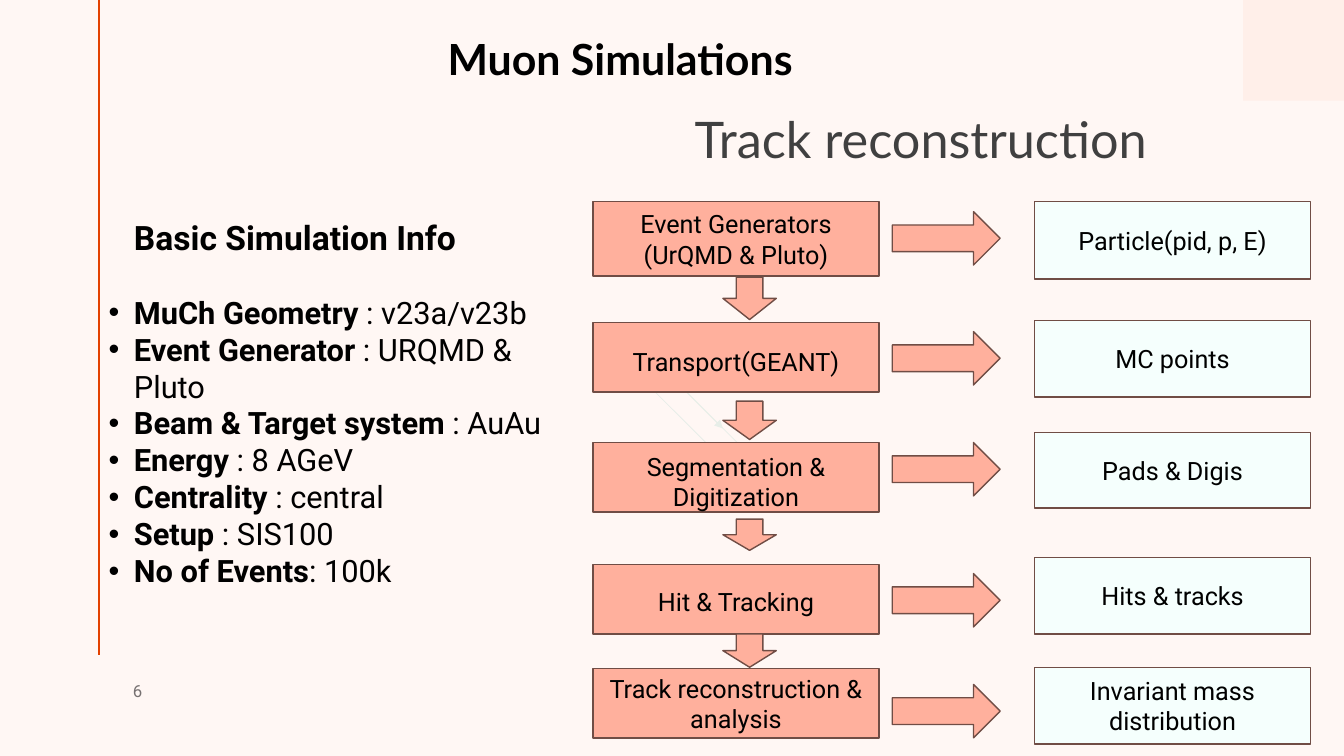
from lxml import etree
from pptx import Presentation
from pptx import util as u
from pptx.dml.color import RGBColor
from pptx.enum import shapes, text
from pptx.oxml.ns import qn

# Content
TITLE = "Muon Simulations"
HEADING = "Track reconstruction"
NUMBER = "6"
INFO = "Basic Simulation Info"
FACTS = [
    ("MuCh Geometry", " : v23a/v23b"),
    ("Event Generator", " : URQMD & Pluto"),
    ("Beam & Target system", " : AuAu"),
    ("Energy", " : 8 AGeV"),
    ("Centrality", " : central"),
    ("Setup", " : SIS100"),
    ("No of Events", ": 100k"),
]
# Stage text, top, height, top inset
STAGES = [
    ("Event Generators\n(UrQMD & Pluto)", 2, 0.74, 0.05),
    ("Transport(GEANT)", 3.2, 0.69, 0.13),
    ("Segmentation & Digitization", 4.39, 0.69, 0.13),
    ("Hit & Tracking", 5.6, 0.69, 0.1),
    ("Track reconstruction & analysis", 6.63, 0.69, 0.05),
]
# Result text, top, height, top of the arrow to it
RESULTS = [
    ("Particle(pid, p, E)", 2, 0.77, 2.1),
    ("MC points", 3.18, 0.76, 3.29),
    ("Pads & Digis", 4.29, 0.75, 4.39),
    ("Hits & tracks", 5.53, 0.76, 5.69),
    ("Invariant mass distribution", 6.62, 0.76, 6.79),
]
DROPS = [(2.75, 0.42), (3.98, 0.38), (5.15, 0.31), (6.29, 0.33)]
FAINT = [(6.17, 3.25), (6.31, 3.7), (6.48, 3.56)]

COLORS = {"back": "FFF7F4", "rule": "E34100", "corner": "FFEFE9",
          "stage": "FFB09D", "result": "F5FFFD", "edge": "704D45",
          "faint": "E7EEE8", "black": "000000", "head": "404040",
          "gray": "767171"}
KIND = shapes.MSO_SHAPE
ALIGN = text.PP_ALIGN
ANCHOR = text.MSO_ANCHOR


def rgb(name):
    return RGBColor.from_string(COLORS[name])


def style(font, color="black", **form):
    for key, val in {"name": "Roboto", **form}.items():
        setattr(font, key, val)
    font.color.rgb = rgb(color)


def write(frame, words, anchor=ANCHOR.MIDDLE, align=ALIGN.LEFT, space=None, **form):
    frame.word_wrap = True
    frame.vertical_anchor = anchor
    for i, line in enumerate(words.split("\n")):
        para = frame.paragraphs[0] if i == 0 else frame.add_paragraph()
        para.alignment = align
        if space:
            para.line_spacing = space
        run = para.add_run()
        run.text = line
        style(run.font, **form)


def label(box, words, **form):
    frame = slide.shapes.add_textbox(*map(u.Inches, box)).text_frame
    write(frame, words, **form)
    return frame


def block(kind, box, fill, edge="edge"):
    shape = slide.shapes.add_shape(kind, *map(u.Inches, box))
    shape.shadow.inherit = False
    shape.fill.solid()
    shape.fill.fore_color.rgb = rgb(fill)
    if edge:
        shape.line.color.rgb = rgb(edge)
        shape.line.width = u.Pt(1)
    else:
        shape.line.fill.background()
    return shape


def box(words, left, top, wide, high, fill, inset=0.05):
    frame = block(KIND.RECTANGLE, (left, top, wide, high), fill).text_frame
    frame.margin_top = u.Inches(inset)
    write(frame, words, align=ALIGN.CENTER, size=u.Pt(18))


def line(ends, color, width, arrow=False):
    link = slide.shapes.add_connector(shapes.MSO_CONNECTOR.STRAIGHT,
                                      *map(u.Inches, ends))
    link.line.color.rgb = rgb(color)
    link.line.width = u.Pt(width)
    if arrow:
        etree.SubElement(link.line._get_or_add_ln(), qn("a:tailEnd"), type="triangle")
    etree.SubElement(link._element.spPr, qn("a:effectLst"))


def indent(para, hang):
    props = para._p.get_or_add_pPr()
    props.set("marL", str(u.Inches(0.25)))
    props.set("indent", str(-u.Inches(hang)))
    return props


deck = Presentation()
deck.slide_width, deck.slide_height = u.Inches(13.33), u.Inches(7.5)
slide = deck.slides.add_slide(deck.slide_layouts[6])
slide.background.fill.solid()
slide.background.fill.fore_color.rgb = rgb("back")

# Frame of the page
line((0.98, 0, 0.98, 6.5), "rule", 1.5)
block(KIND.RECTANGLE, (12.33, 0, 1, 1), "corner", None)

# Headings and page number
head = label((6.89, 1.07, 4.73, 0.69), HEADING, space=0.9, name="Lato",
             size=u.Pt(36), color="head")
head.margin_left = 0
label((4.34, 0.12, 4.11, 0.76), TITLE, anchor=ANCHOR.BOTTOM, space=0.8,
      name="Lato", size=u.Pt(30.6), bold=True)
label((0.45, 6.5, 1.06, 0.71), NUMBER, align=ALIGN.RIGHT, size=u.Pt(12), color="gray")

# Faint arrows behind the flow
for x, y in FAINT:
    line((x, y, x + 1, y + 1), "faint", 0.5, True)

# Flow of stages and their results
for words, top, high, inset in STAGES:
    box(words, 5.88, top, 2.84, high, "stage", inset)
for top, high in DROPS:
    block(KIND.DOWN_ARROW, (7.17, top, 0.53, high), "stage")
for words, top, high, mark in RESULTS:
    block(KIND.RIGHT_ARROW, (8.85, mark, 1.07, 0.53), "stage")
    box(words, 10.26, top, 2.74, high, "result")

# Simulation facts
facts = label((0.98, 2.1, 4.76, 3.47), INFO, anchor=ANCHOR.TOP,
              size=u.Pt(24), bold=True)
indent(facts.paragraphs[0], 0)
for i, pair in enumerate(FACTS):
    para = facts.add_paragraph()
    props = indent(para, 0.25)
    if i == 0:
        para.space_before = u.Pt(26)
    etree.SubElement(props, qn("a:buFont"), typeface="Arial")
    etree.SubElement(props, qn("a:buChar"), char="•")
    for words, bold in zip(pair, (True, False)):
        run = para.add_run()
        run.text = words
        style(run.font, size=u.Pt(22), bold=bold)

deck.save("out.pptx")
